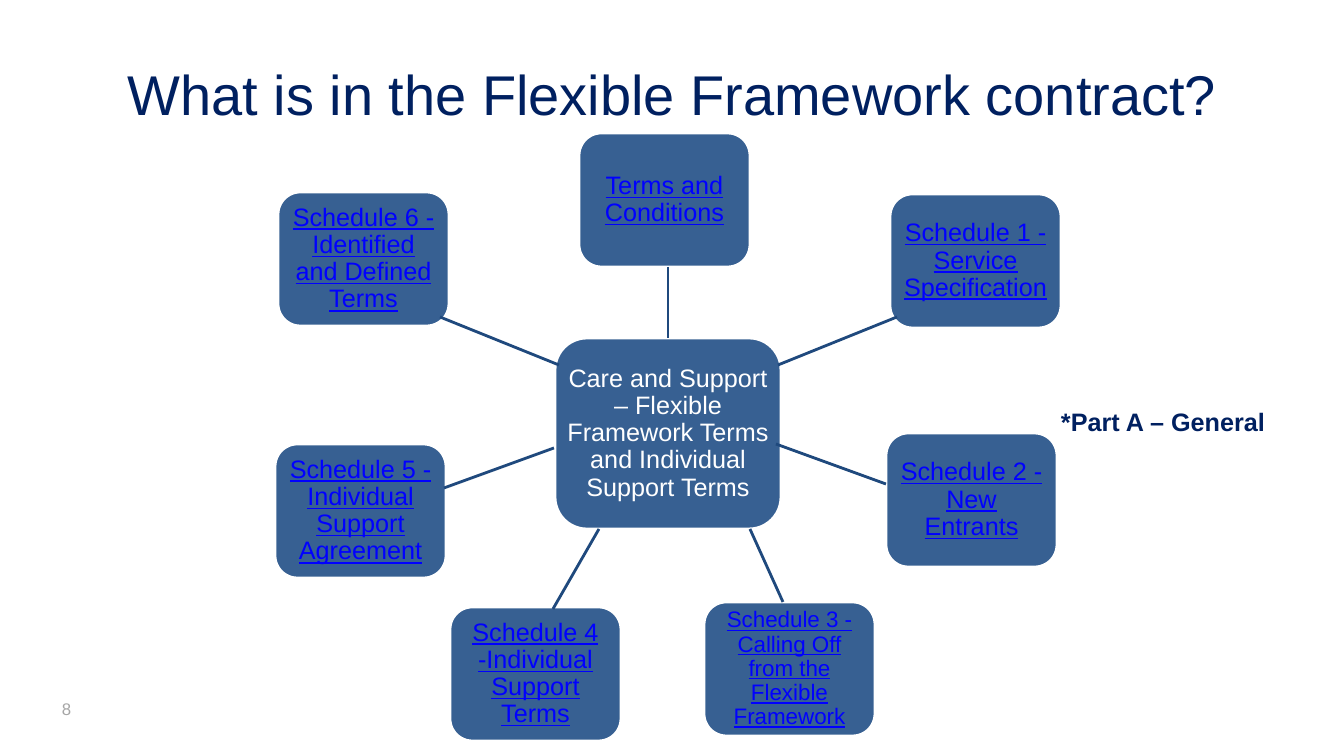
from lxml.etree import SubElement
from pptx import Presentation
from pptx.dml.color import RGBColor
from pptx.enum.shapes import MSO_CONNECTOR as Connector, MSO_SHAPE as Shape
from pptx.enum.text import MSO_ANCHOR as Anchor, PP_ALIGN as Align
from pptx.oxml.ns import qn
from pptx.util import Pt

PX = 914400 / 100.8
NAVY = RGBColor(0x00, 0x20, 0x60)
STEEL = RGBColor(0x37, 0x60, 0x92)
SPOKE = RGBColor(0x1F, 0x49, 0x7D)
LINK = RGBColor(0x00, 0x00, 0xFF)
GREY = RGBColor(0xA6, 0xA6, 0xA6)
WHITE = RGBColor(0xFF, 0xFF, 0xFF)


def px(*lengths):
    return [round(length * PX) for length in lengths]


def write(holder, wording, color, align=Align.CENTER, wrap=True, spacing=1.0, **font_format):
    frame = holder.text_frame
    frame.word_wrap = wrap
    frame.vertical_anchor = Anchor.MIDDLE
    paragraph = frame.paragraphs[0]
    paragraph.alignment = align
    paragraph.line_spacing = spacing
    run = paragraph.add_run()
    run.text = wording
    for key, value in {"name": "Arial", **font_format}.items():
        setattr(run.font, key, value)
    run.font.color.rgb = color
    return frame


deck = Presentation()
deck.slide_width, deck.slide_height = px(1344, 756)
slide = deck.slides.add_slide(deck.slide_layouts[6])
shapes = slide.shapes

number = shapes.add_textbox(*px(52, 694, 221, 30))
write(number, "8", GREY, Align.LEFT, size=Pt(12))
title = shapes.add_textbox(*px(67, 30, 1210, 126))
write(title, "What is in the Flexible Framework contract?", NAVY, size=Pt(40))

BOX_SIZE = (171, 134)
hub_text = "Care and Support – Flexible Framework Terms and Individual Support Terms"
boxes = [
    (hub_text, (555, 338), (226, 191), 3, WHITE, {"size": Pt(18)}),
]
documents = [
    ("Terms and Conditions", (579, 133), 18),
    ("Schedule 1 - Service Specification", (890, 194), 18),
    ("Schedule 2 - New Entrants", (886, 433), 18),
    ("Schedule 3 - Calling Off from the Flexible Framework", (704, 602), 16),
    ("Schedule 4 -Individual Support Terms", (450, 607), 18),
    ("Schedule 5 - Individual Support Agreement", (275, 444), 18),
    ("Schedule 6 - Identified and Defined Terms", (278, 192), 18),
]
for wording, corner, points in documents:
    boxes.append((wording, corner, BOX_SIZE, 6, LINK, {"size": Pt(points), "underline": True}))

drawn = []
for wording, corner, size, margin, color, font_format in boxes:
    box = shapes.add_shape(Shape.ROUNDED_RECTANGLE, *px(*corner, *size))
    box.shadow.inherit = False
    box.fill.solid()
    box.fill.fore_color.rgb = STEEL
    box.line.color.rgb = WHITE
    box.line.width = Pt(2)
    frame = write(box, wording, color, spacing=0.9, **font_format)
    for side in ("left", "right", "top", "bottom"):
        setattr(frame, f"margin_{side}", px(margin)[0])
    drawn.append(box)
hub = drawn[0]

spokes = [
    (668, 267, 668, 338),
    (778, 365, 897, 317),
    (776, 444, 886, 484),
    (559, 365, 440, 317),
    (554, 448, 444, 488),
    (599, 529, 553, 609),
    (750, 529, 783, 602),
]
for spoke_index, ends in enumerate(spokes):
    spoke = shapes.add_connector(Connector.STRAIGHT, *px(*ends))
    spoke.line.color.rgb = SPOKE
    spoke.line.width = Pt(2)
    SubElement(spoke.element.spPr, qn("a:effectLst"))
    if spoke_index == 0:
        spoke.end_connect(hub, 0)

footnote = shapes.add_textbox(*px(1050, 401, 226, 40))
write(footnote, "*Part A – General", NAVY, wrap=False, size=Pt(18), bold=True)

deck.save("out.pptx")
